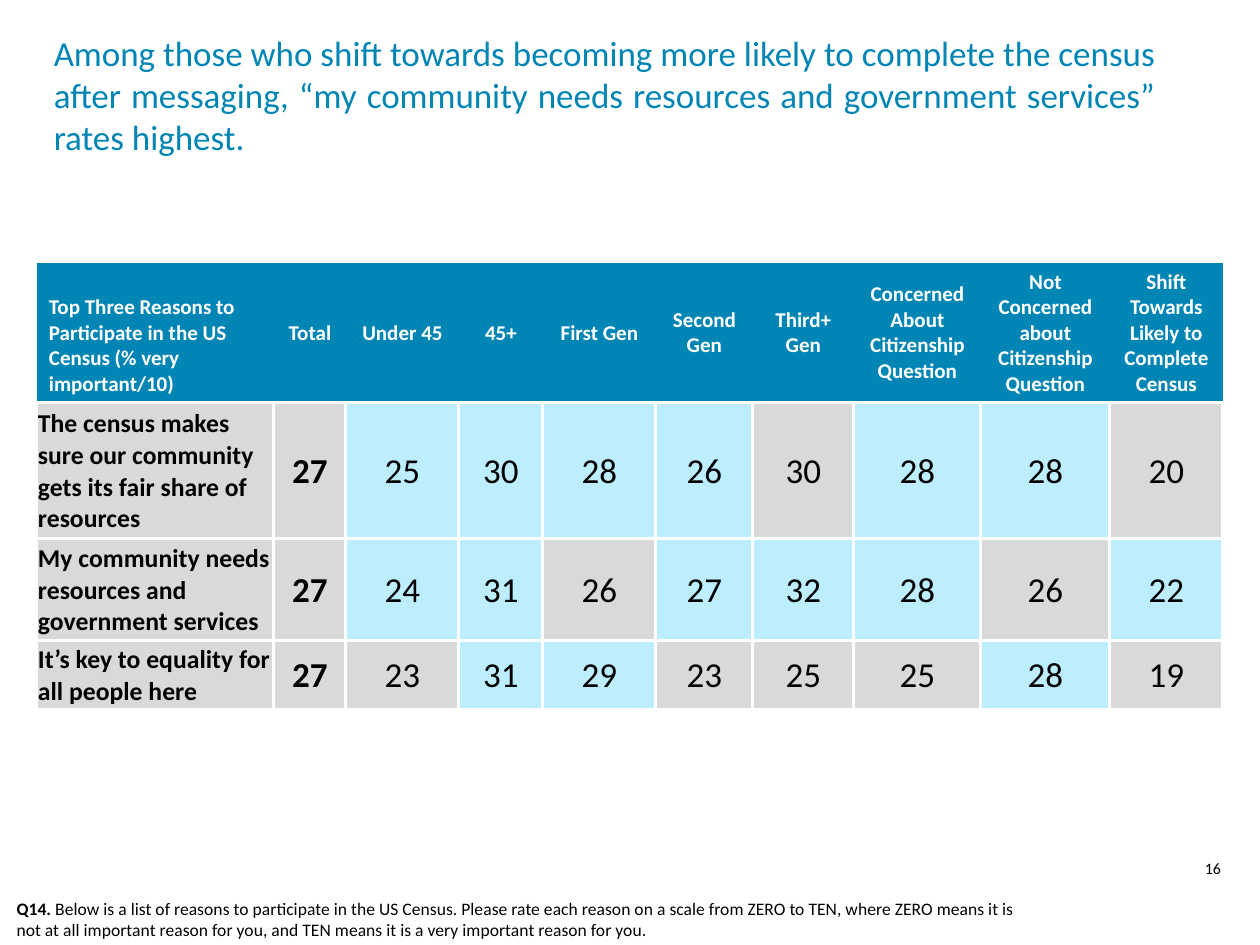
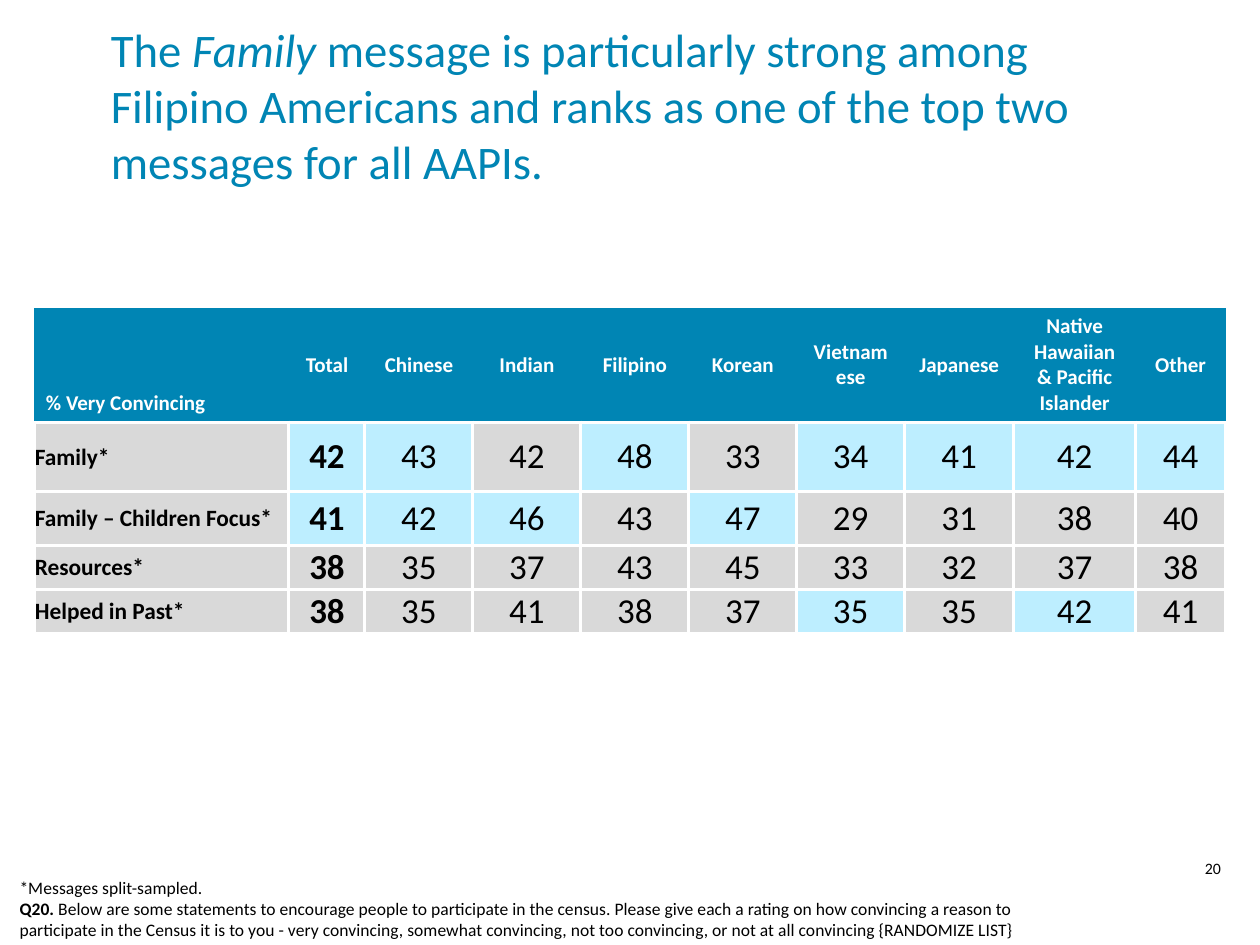
from lxml.etree import SubElement
from pptx import Presentation
from pptx.dml.color import RGBColor
from pptx.enum.text import MSO_ANCHOR as Anchor, MSO_AUTO_SIZE as AutoSize, PP_ALIGN as Align
from pptx.oxml.ns import qn
from pptx.util import Emu, Pt

FONT = "Calibri"
COLORS = {
    "blue": "0085B4",
    "highlight": "BDEEFF",
    "grey": "D9D9D9",
    "white": "FFFFFF",
    "black": "000000",
}
PX_PER_INCH = 168
SLIDE_SIZE = (1260, 945)
TITLE_ONLY = 5
PAGE_NUMBER_BOX = (1166, 850, 94, 42)
BORDER_WIDTH = Pt(1.5)


def px(length):
    return Emu(round(length * 914400 / PX_PER_INCH))


def rgb(name):
    return RGBColor.from_string(COLORS[name])


def place(shape, box):
    shape.left, shape.top, shape.width, shape.height = map(px, box)


def write(text_frame, text, size, color="black", bold=False, align=Align.LEFT):
    paragraphs = [[(text, "")]] if isinstance(text, str) else text
    text_frame.word_wrap = True
    for index, runs in enumerate(paragraphs):
        paragraph = text_frame.add_paragraph() if index else text_frame.paragraphs[0]
        paragraph.alignment = align
        for words, emphasis in runs:
            run = paragraph.add_run()
            run.text = words
            run.font.name = FONT
            run.font.size = Pt(size)
            run.font.color.rgb = rgb(color)
            run.font.bold = bold or emphasis == "bold"
            run.font.italic = emphasis == "italic"


def add_title(slide, box, text, size, align):
    title = slide.shapes.title
    place(title, box)
    title.text_frame.auto_size = AutoSize.NONE
    title.text_frame.vertical_anchor = Anchor.MIDDLE
    write(title.text_frame, text, size, color="blue", align=align)


def add_text(slide, box, text, size, **text_format):
    text_box = slide.shapes.add_textbox(*map(px, box))
    write(text_box.text_frame, text, size, **text_format)


def set_borders(cell, visible_sides):
    properties = cell._tc.get_or_add_tcPr()
    for side in "LRTB":
        line = SubElement(properties, qn(f"a:ln{side}"), w=str(BORDER_WIDTH))
        if side in visible_sides:
            fill = SubElement(line, qn("a:solidFill"))
            SubElement(fill, qn("a:srgbClr"), val=COLORS["white"])
        else:
            SubElement(line, qn("a:noFill"))


def format_cell(cell, text, size, fill, borders, margins, anchor=Anchor.MIDDLE, **text_format):
    set_borders(cell, borders)
    cell.fill.solid()
    cell.fill.fore_color.rgb = rgb(fill)
    cell.margin_left = cell.margin_right = px(margins[0])
    cell.margin_top, cell.margin_bottom = px(margins[1]), px(margins[2])
    cell.vertical_anchor = anchor
    write(cell.text_frame, text, size, **text_format)


def add_ratings_table(slide, origin, widths, heights, headers, rows, label_size):
    box = (*origin, sum(widths), sum(heights))
    table = slide.shapes.add_table(len(heights), len(widths), *map(px, box)).table
    table.horz_banding = False
    for column, width in zip(table.columns, widths):
        column.width = px(width)
    for row, height in zip(table.rows, heights):
        row.height = px(height)

    for index, header in enumerate(headers):
        format_cell(table.cell(0, index), header, 9, "blue", "B", (12, 6, 6),
                    anchor=Anchor.MIDDLE if index else Anchor.BOTTOM,
                    color="white", bold=True,
                    align=Align.CENTER if index else Align.LEFT)

    for row_index, (label, values, highlighted) in enumerate(rows, 1):
        for index, value in enumerate([label, *values]):
            format_cell(table.cell(row_index, index), str(value),
                        15 if index else label_size,
                        "highlight" if index in highlighted else "grey",
                        "LRTB", (1, 1, 0), bold=index < 2,
                        align=Align.CENTER if index else Align.LEFT)


def add_ratings_slide(presentation, title, table, footnote, page_number):
    slide = presentation.slides.add_slide(presentation.slide_layouts[TITLE_ONLY])
    add_title(slide, **title)
    add_ratings_table(slide, **table)
    add_text(slide, **footnote, size=7.5)
    add_text(slide, PAGE_NUMBER_BOX, page_number, 6.8, align=Align.CENTER)


def main():
    presentation = Presentation()
    presentation.slide_width, presentation.slide_height = map(px, SLIDE_SIZE)

    add_ratings_slide(
        presentation,
        title={
            "box": (37, 22, 1136, 146),
            "text": "Among those who shift towards becoming more likely to complete the census "
                    "after messaging, “my community needs resources and government services” "
                    "rates highest.",
            "size": 15,
            "align": Align.JUSTIFY,
        },
        table={
            "origin": (37, 263),
            "widths": [237, 72, 113, 84, 113, 97, 101, 127, 129, 113],
            "heights": [140, 136, 102, 69],
            "headers": ["Top Three Reasons to Participate in the US Census (% very important/10)",
                        "Total", "Under 45", "45+", "First Gen", "Second Gen", "Third+ Gen",
                        "Concerned About Citizenship Question",
                        "Not Concerned about Citizenship Question",
                        "Shift Towards Likely to Complete Census"],
            "rows": [
                ("The census makes sure our community gets its fair share of resources",
                 [27, 25, 30, 28, 26, 30, 28, 28, 20], {2, 3, 4, 5, 7, 8}),
                ("My community needs resources and government services",
                 [27, 24, 31, 26, 27, 32, 28, 26, 22], {2, 3, 5, 6, 7, 9}),
                ("It’s key to equality for all people here",
                 [27, 23, 31, 29, 23, 25, 25, 28, 19], {3, 4, 8}),
            ],
            "label_size": 11,
        },
        footnote={
            "box": (0, 890, 1043, 59),
            "text": [[("Q14. ", "bold"),
                      ("Below is a list of reasons to participate in the US Census. Please rate "
                       "each reason on a scale from ZERO to TEN, where ZERO means it is not at all "
                       "important reason for you, and TEN means it is a very important reason for "
                       "you.", "")]],
        },
        page_number="16",
    )

    add_ratings_slide(
        presentation,
        title={
            "box": (94, 32, 1074, 146),
            "text": [[("The ", ""), ("Family ", "italic"),
                      ("message is particularly strong among Filipino Americans and ranks as one "
                       "of the top two messages for all AAPIs.", "")]],
            "size": 20,
            "align": Align.LEFT,
        },
        table={
            "origin": (34, 308),
            "widths": [255, 76, *[108] * 5, 109, 122, 90],
            "heights": [113, 69, 54, 44, 44],
            "headers": ["% Very Convincing", "Total", "Chinese", "Indian", "Filipino", "Korean",
                        "Vietnamese", "Japanese", "Native Hawaiian & Pacific Islander", "Other"],
            "rows": [
                ("Family*", [42, 43, 42, 48, 33, 34, 41, 42, 44], {1, 2, 4, 6, 7, 8, 9}),
                ("Family – Children Focus*", [41, 42, 46, 43, 47, 29, 31, 38, 40], {1, 2, 3, 5}),
                ("Resources*", [38, 35, 37, 43, 45, 33, 32, 37, 38], set()),
                ("Helped in Past*", [38, 35, 41, 38, 37, 35, 35, 42, 41], {6, 8}),
            ],
            "label_size": 10,
        },
        footnote={
            "box": (3, 869, 1050, 81),
            "text": [[("*Messages split-sampled.", "")],
                     [("Q20. ", "bold"),
                      ("Below are some statements to encourage people to participate in the census. "
                       "Please give each a rating on how convincing a reason to participate in the "
                       "Census it is to you - very convincing, somewhat convincing, not too "
                       "convincing, or not at all convincing {RANDOMIZE LIST}", "")]],
        },
        page_number="20",
    )

    presentation.save("out.pptx")


if __name__ == "__main__":
    main()
